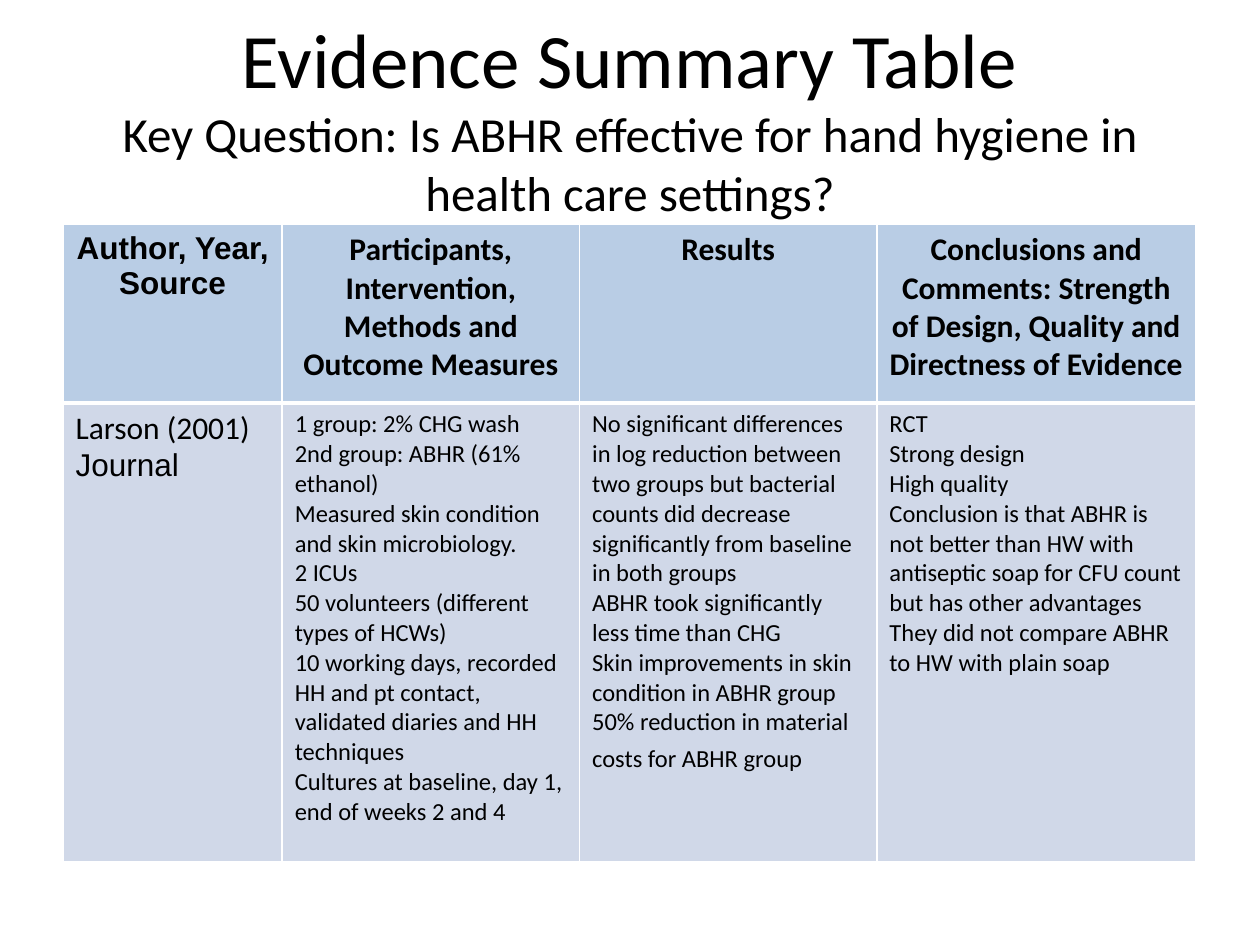
from lxml.etree import SubElement
from pptx import Presentation
from pptx.dml.color import RGBColor
from pptx.enum.text import MSO_ANCHOR, MSO_AUTO_SIZE, PP_ALIGN
from pptx.oxml.ns import qn
from pptx.util import Inches, Pt

HEADERS = [
    "Author, Year, Source",
    "Participants, Intervention, Methods and Outcome Measures",
    "Results",
    "Conclusions and Comments: Strength of Design, Quality and Directness of Evidence",
]
STUDY = [
    ["Larson (2001)", "Journal"],
    [
        "1 group: 2% CHG wash",
        "2nd group: ABHR (61% ethanol)",
        "Measured skin condition and skin microbiology.",
        "2 ICUs",
        "50 volunteers (different types of HCWs)",
        "10 working days, recorded HH and pt contact, validated diaries and HH techniques",
        "Cultures at baseline, day 1, end of weeks 2 and 4",
    ],
    [
        "No significant differences in log reduction between two groups but bacterial "
        "counts did decrease significantly from baseline in both groups",
        "ABHR took significantly less time than CHG",
        "Skin improvements in skin condition in ABHR group",
        "50% reduction in material costs for ABHR group",
    ],
    [
        "RCT",
        "Strong design",
        "High quality",
        "Conclusion is that ABHR is not better than HW with antiseptic soap for CFU count "
        "but has other advantages",
        "They did not compare ABHR to HW with plain soap",
    ],
]


def color(value):
    """Turn a hex string into a colour."""
    return RGBColor.from_string(value)


class SlideWriter:
    """Holds the style and the current slide."""

    font, ink, line = "Calibri", "000000", "FFFFFF"
    header_fill, body_fill = "B9CDE5", "D0D8E8"

    def __init__(self, page):
        """Keep the slide to write on."""
        self.page = page

    def span(self, para, text, size, **changes):
        """Add a formatted run to a paragraph."""
        span = para.add_run()
        span.text = text
        formats = {"name": self.font, "size": Pt(size), "bold": False, **changes}
        for name, value in formats.items():
            setattr(span.font, name, value)
        span.font.color.rgb = color(self.ink)

    def title(self, place, heading, question):
        """Add the heading with the key question below it."""
        frame = self.page.shapes.add_textbox(*map(Inches, place)).text_frame
        formats = {
            "word_wrap": True,
            "auto_size": MSO_AUTO_SIZE.NONE,
            "vertical_anchor": MSO_ANCHOR.MIDDLE,
        }
        for name, value in formats.items():
            setattr(frame, name, value)
        para = frame.paragraphs[0]
        para.alignment = PP_ALIGN.CENTER
        self.span(para, heading, 44)
        para.add_line_break()
        self.span(para, question, 28)

    def table(self, place, widths, heights):
        """Add an empty table with the given column widths and row heights."""
        shape = self.page.shapes.add_table(
            len(heights), len(widths), *map(Inches, place)
        )
        table = shape.table
        table.horz_banding = False
        for column, width in zip(table.columns, widths):
            column.width = Inches(width)
        for row, height in zip(table.rows, heights):
            row.height = Inches(height)
        return table

    def borders(self, cell, widths):
        """Draw the four sides of a cell, widths in points."""
        properties = cell._tc.get_or_add_tcPr()
        for side, width in zip("LRTB", widths):
            edge = SubElement(properties, qn(f"a:ln{side}"), w=str(Pt(width)))
            fill = SubElement(edge, qn("a:solidFill"))
            SubElement(fill, qn("a:srgbClr"), val=self.line)

    def cell(self, cell, lines, size, fill, widths, align=PP_ALIGN.LEFT, **changes):
        """Fill a cell with one paragraph per line."""
        self.borders(cell, widths)
        cell.fill.solid()
        cell.fill.fore_color.rgb = color(fill)
        for index, text in enumerate(lines):
            frame = cell.text_frame
            para = frame.add_paragraph() if index else frame.paragraphs[0]
            para.alignment = align
            self.span(para, text, size, **changes)


def main():
    """Build the evidence summary slide."""
    deck = Presentation()
    deck.slide_width, deck.slide_height = Inches(10), Inches(7.5)
    writer = SlideWriter(deck.slides.add_slide(deck.slide_layouts[6]))
    writer.title(
        (0.5, 0.3, 9, 1.25),
        "Evidence Summary Table",
        "Key Question: Is ABHR effective for hand hygiene in health care settings?",
    )
    table = writer.table((0.5, 1.78, 9, 5.06), (1.74, 2.36, 2.36, 2.53), (1.42, 3.64))
    for index, (header, lines) in enumerate(zip(HEADERS, STUDY)):
        writer.cell(
            table.cell(0, index), [header], 18, writer.header_fill, (1, 1, 1, 3),
            PP_ALIGN.CENTER, bold=True, name=writer.font if index else "Arial",
        )
        writer.cell(
            table.cell(1, index), lines, 14 if index else 18,
            writer.body_fill, (1, 1, 3, 1),
        )
    source = table.cell(1, 0).text_frame.paragraphs[-1]
    source.runs[0].font.name = "Arial"
    costs = table.cell(1, 2).text_frame.paragraphs[-1]
    writer.span(costs, " ", 18)
    deck.save("out.pptx")


if __name__ == "__main__":
    main()
